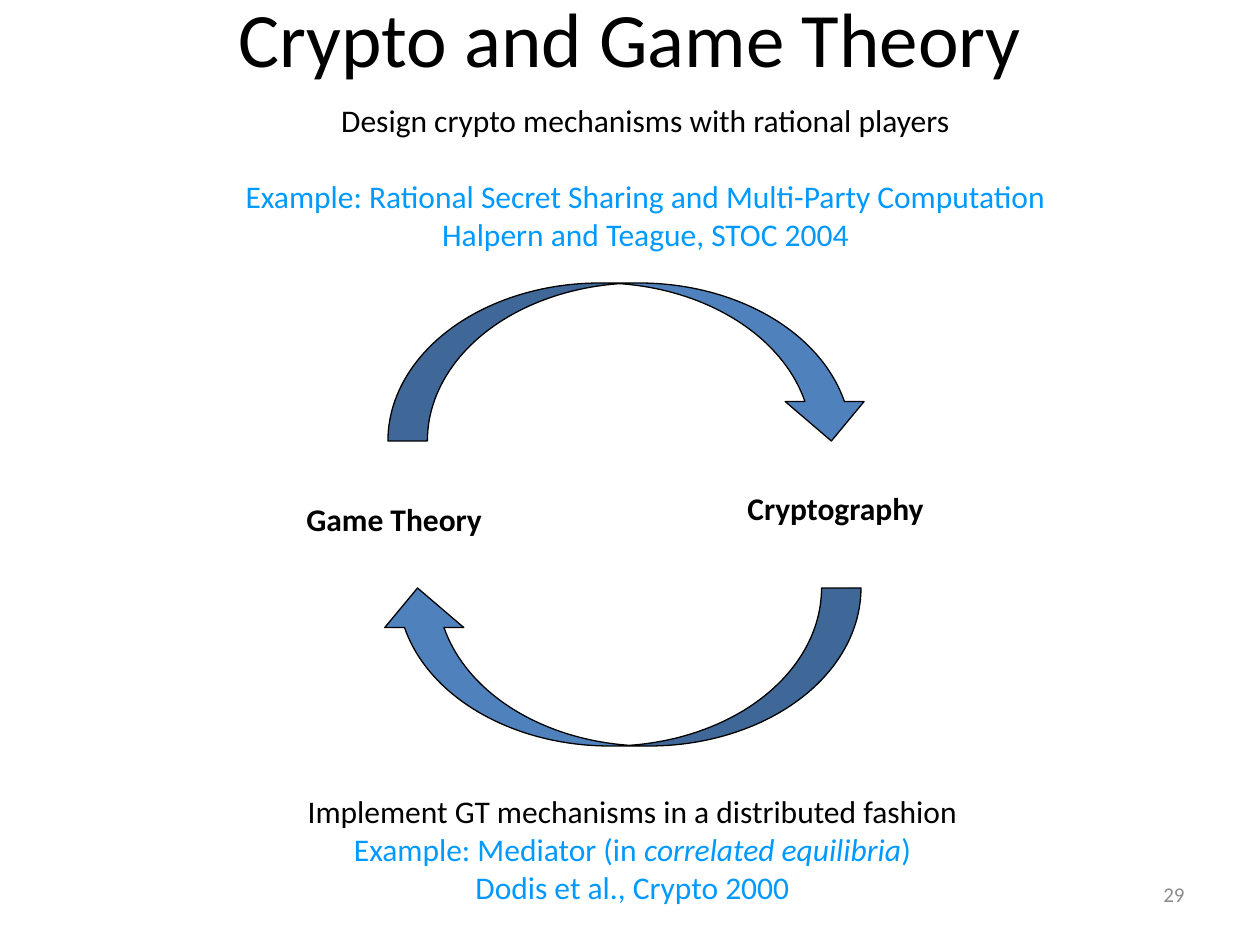
from pptx import Presentation
from pptx.dml.color import RGBColor
from pptx.enum.shapes import MSO_SHAPE
from pptx.enum.text import MSO_ANCHOR, PP_ALIGN
from pptx.util import Emu, Pt

PX = 914400 // 126  # EMU per px


class Theme:
    font = "Calibri"
    black = RGBColor.from_string("000000")
    example = RGBColor.from_string("0099FF")
    arrow = RGBColor.from_string("4F81BD")
    number = RGBColor.from_string("8C8C8C")
    title_size = Pt(44)
    body_size = Pt(18)
    number_size = Pt(12)
    line_width = Pt(0.75)
    example_gap = Pt(22)


def box(*lengths):
    return [Emu(length * PX) for length in lengths]


def style(paragraph, size, color, alignment, bold=False):
    paragraph.alignment = alignment
    font = paragraph.font
    font.name, font.size, font.bold = Theme.font, size, bold
    font.color.rgb = color


presentation = Presentation()
presentation.slide_width, presentation.slide_height = box(1260, 945)
slide = presentation.slides.add_slide(presentation.slide_layouts[5])

# Title
title = slide.shapes.title
title.left, title.top, title.width, title.height = box(63, -42, 1134, 158)
title.text_frame.text = "Crypto and Game Theory"
title.text_frame.vertical_anchor = MSO_ANCHOR.MIDDLE
style(title.text_frame.paragraphs[0], Theme.title_size, Theme.black, PP_ALIGN.CENTER)

# Arrows of the cycle
for left, top, rotation in [(388, 283, 0), (378, 588, 180)]:
    arrow = slide.shapes.add_shape(MSO_SHAPE.CURVED_DOWN_ARROW, *box(left, top, 483, 158))
    arrow.rotation = rotation
    arrow.shadow.inherit = False
    arrow.fill.solid()
    arrow.fill.fore_color.rgb = Theme.arrow
    arrow.line.color.rgb = Theme.black
    arrow.line.width = Theme.line_width

# The two fields
for text, left, top, width in [("Game Theory", 294, 494, 228), ("Cryptography", 735, 483, 234)]:
    label = slide.shapes.add_textbox(*box(left, top, width, 50))
    label.text_frame.text = text
    style(label.text_frame.paragraphs[0], Theme.body_size, Theme.black, PP_ALIGN.LEFT, bold=True)

# Captions: a statement, then its example; each line is a list of (text, italic) runs
captions = [
    ((168, 95, 955, 165), Theme.example_gap, [
        [("Design crypto mechanisms with rational players", False)],
        [("Example: Rational Secret Sharing and Multi-Party Computation", False)],
        [("Halpern and Teague, STOC 2004", False)],
    ]),
    ((262, 786, 741, 127), Pt(0), [
        [("Implement GT mechanisms in a distributed fashion", False)],
        [("Example: Mediator (in ", False), ("correlated equilibria", True), (")", False)],
        [("Dodis et al., Crypto 2000", False)],
    ]),
]
for place, gap, lines in captions:
    frame = slide.shapes.add_textbox(*box(*place)).text_frame
    frame.word_wrap = True
    for index, line in enumerate(lines):
        paragraph = frame.add_paragraph() if index else frame.paragraphs[0]
        color = Theme.example if index else Theme.black
        style(paragraph, Theme.body_size, color, PP_ALIGN.CENTER)
        if index == 1:
            paragraph.space_before = gap
        for text, italic in line:
            run = paragraph.add_run()
            run.text = text
            if italic:
                run.font.italic = True

# Slide number
number = slide.shapes.add_textbox(*box(903, 861, 294, 66))
number.text_frame.text = "29"
number.text_frame.vertical_anchor = MSO_ANCHOR.MIDDLE
style(number.text_frame.paragraphs[0], Theme.number_size, Theme.number, PP_ALIGN.RIGHT)
number.text_frame.word_wrap = True

presentation.save("out.pptx")
